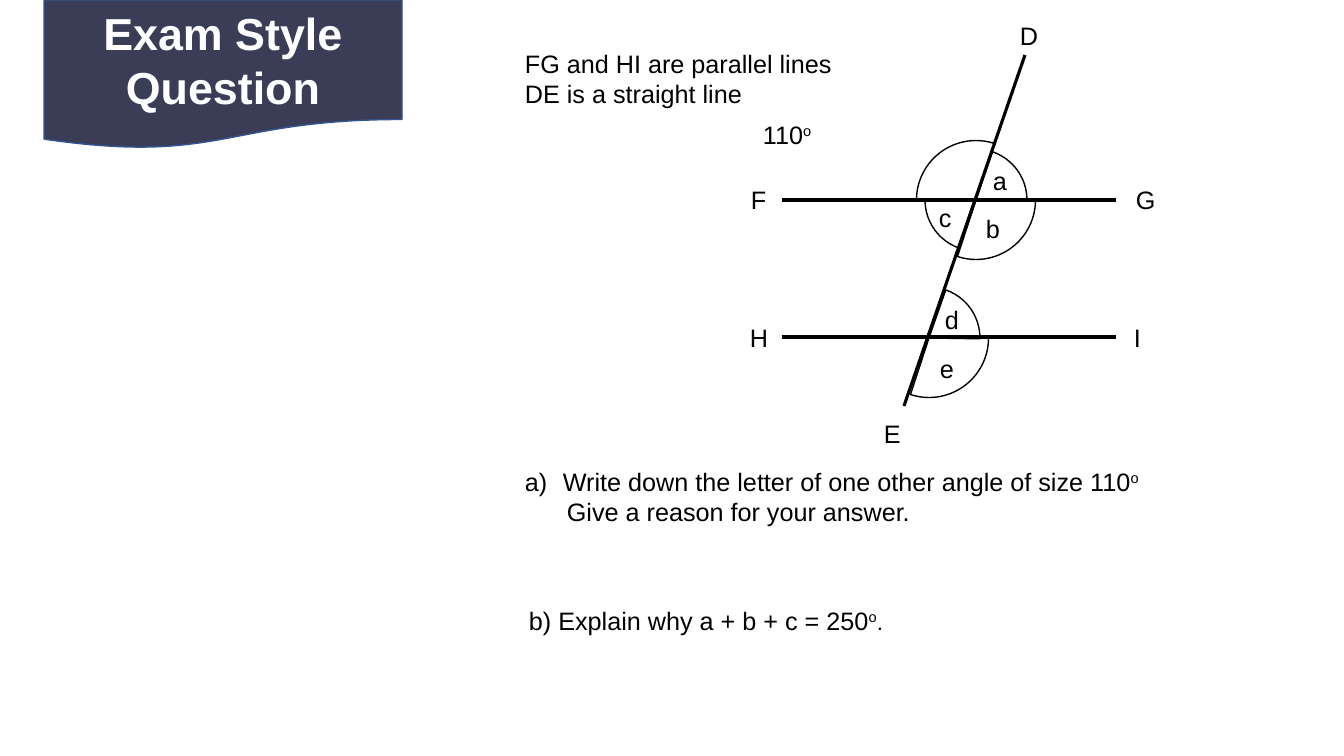
"""Build an exam question slide about angles on parallel lines."""
from lxml import etree
from pptx import Presentation
from pptx.dml.color import RGBColor
from pptx.enum.shapes import MSO_CONNECTOR, MSO_SHAPE
from pptx.enum.text import MSO_ANCHOR, MSO_AUTO_SIZE, PP_ALIGN
from pptx.oxml.ns import qn
from pptx.util import Emu, Pt

STRAIGHT = MSO_CONNECTOR.STRAIGHT
BANNER = MSO_SHAPE.FLOWCHART_DOCUMENT
PIE = MSO_SHAPE.PIE
MIDDLE = MSO_ANCHOR.MIDDLE
GROW = MSO_AUTO_SIZE.SHAPE_TO_FIT_TEXT
CENTER = PP_ALIGN.CENTER

EMU_PER_PX = 914400 / 100.8
DEGREE = 0.6
BLACK, WHITE, NAVY, BLUE = "000000", "FFFFFF", "3B3D56", "325491"
UPPER, LOWER = (976, 200), (929, 338)
WIDE, NARROW = 119, 102

POINT_LABELS = [
    ("D", 1010, 15), ("E", 874, 413), ("F", 741, 179),
    ("G", 1126, 179), ("H", 740, 317), ("I", 1124, 317),
]
ANGLE_LABELS = [
    ("a", 983, 160), ("b", 976, 208), ("c", 929, 197),
    ("d", 935, 299), ("e", 930, 348),
]
LINES = [(782, 200, 1116, 200), (782, 337, 1116, 337), (904, 406, 1025, 55)]
ANGLES = [
    (UPPER, WIDE, 0, 180), (UPPER, WIDE, 0, 0), (LOWER, WIDE, 0, 0),
    (UPPER, NARROW, 37.38, 71.9), (UPPER, NARROW, 37.38, 251.5),
    (LOWER, NARROW, 36.58, 252.7),
]


def px(length):
    """Turn pixels into EMU."""
    return Emu(round(length * EMU_PER_PX))


def color(value):
    """Turn a hex string into a colour."""
    return RGBColor.from_string(value)


def style_font(font, size=18, shade=BLACK, bold=False):
    """Set the slide's typeface with a size, colour and weight."""
    font.name = "Arial"
    font.size = Pt(size)
    font.bold = bold
    font.color.rgb = color(shade)


def indent(para, left, hanging=0, numbering=None):
    """Indent a paragraph and number it if a scheme is given."""
    properties = para._p.get_or_add_pPr()
    properties.set("marL", str(px(left)))
    properties.set("indent", str(-px(hanging)))
    if numbering:
        etree.SubElement(properties, qn("a:buAutoNum"), type=numbering)


def add_text(page, left, top, width, height, lines, indents=()):
    """Add lines of text, raising the parts between carets."""
    box = page.shapes.add_textbox(px(left), px(top), px(width), px(height))
    frame = box.text_frame
    frame.word_wrap = True
    frame.auto_size = GROW
    for index, line in enumerate(lines):
        para = frame.add_paragraph() if index else frame.paragraphs[0]
        if indents:
            indent(para, *indents[index])
        style_font(para.font)
        for part, text in enumerate(line.split("^")):
            if text:
                span = para.add_run()
                span.text = text
                if part % 2:
                    span._r.get_or_add_rPr().set("baseline", "30000")
    return frame


def add_line(page, *ends):
    """Add a thick black line between two points."""
    line = page.shapes.add_connector(STRAIGHT, *map(px, ends))
    line.line.color.rgb = color(BLACK)
    line.line.width = Pt(2.25)
    etree.SubElement(line._element.spPr, qn("a:effectLst"))


def add_angle(page, vertex, diameter, start, rotation):
    """Outline an angle as a pie centred on its vertex."""
    left, top = (middle - diameter / 2 for middle in vertex)
    pie = page.shapes.add_shape(PIE, px(left), px(top), px(diameter), px(diameter))
    pie.adjustments[0] = start * DEGREE
    pie.adjustments[1] = 108.13 * DEGREE
    pie.rotation = rotation
    pie.shadow.inherit = False
    pie.fill.background()
    pie.line.color.rgb = color(BLACK)
    pie.line.width = Pt(1)


def add_banner(page, text):
    """Add the heading banner at the top left."""
    banner = page.shapes.add_shape(BANNER, px(44), px(0), px(358), px(149))
    banner.shadow.inherit = False
    banner.fill.solid()
    banner.fill.fore_color.rgb = color(NAVY)
    banner.line.color.rgb = color(BLUE)
    banner.line.width = Pt(1)
    frame = banner.text_frame
    frame.word_wrap = True
    frame.vertical_anchor = MIDDLE
    para = frame.paragraphs[0]
    para.alignment = CENTER
    style_font(para.font, 32, WHITE, True)
    para.add_run().text = text


def main():
    """Build and save the slide."""
    deck = Presentation()
    deck.slide_width, deck.slide_height = px(1344), px(756)
    page = deck.slides.add_slide(deck.slide_layouts[6])
    add_banner(page, "Exam Style Question")
    for ends in LINES:
        add_line(page, *ends)
    for angle in ANGLES:
        add_angle(page, *angle)
    for letter, left, top in POINT_LABELS + ANGLE_LABELS:
        add_text(page, left, top, 30, 40, [letter])
    add_text(page, 515, 43, 351, 72,
             ["FG and HI are parallel lines", "DE is a straight line"])
    add_text(page, 753, 114, 159, 40, ["110^o^"])
    add_text(page, 515, 461, 641, 72,
             ["Write down the letter of one other angle of size 110^o^",
              "Give a reason for your answer."],
             [(38, 38, "alphaLcParenR"), (42,)])
    explain = add_text(page, 519, 600, 416, 40,
                       ["b) Explain why a + b + c = 250^o^."])
    explain.paragraphs[0].runs[-1].font.size = Pt(16)
    deck.save("out.pptx")


if __name__ == "__main__":
    main()
